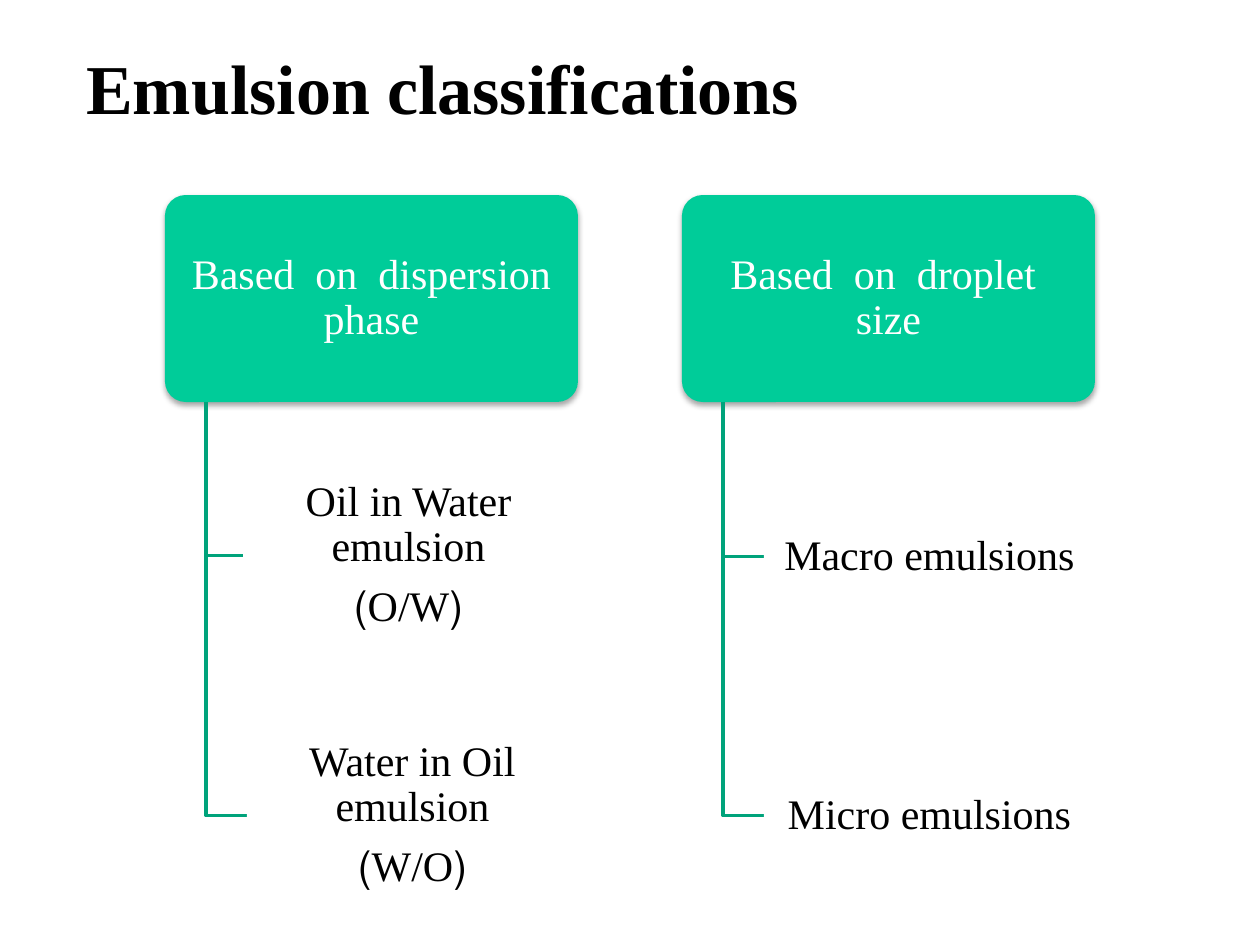
import pptx
import pptx.util
from lxml import etree
from pptx.dml.color import RGBColor
from pptx.enum.shapes import MSO_SHAPE
from pptx.enum.text import MSO_ANCHOR, PP_ALIGN
from pptx.oxml.ns import qn

PX = 914400 / 126
FONT = "Times New Roman"
BLACK = RGBColor(0x00, 0x00, 0x00)
WHITE = RGBColor(0xFF, 0xFF, 0xFF)
GREEN = RGBColor(0x00, 0xCC, 0x99)
DARK_GREEN = RGBColor(0x00, 0xA3, 0x7B)

HEADER_W, CARD_W, CARD_H = 413, 331, 207
HEADER_Y = 195
TRUNK_INSET = 41

# Each branch: left, heading, then (left, top, lines) of its cards
BRANCHES = [
    (165, "Based  on  dispersion phase", [
        (243, 452, ["Oil in Water emulsion", "(O/W)"]),
        (247, 712, ["Water in Oil emulsion", "(W/O)"])]),
    (682, "Based  on  droplet  size", [
        (764, 453, ["Macro emulsions"]),
        (764, 712, ["Micro emulsions"])]),
]


def px(n):
    return pptx.util.Emu(round(n * PX))


def style(p, size, color, bold=False):
    p.font.name = FONT
    p.font.size = pptx.util.Pt(size)
    p.font.bold = bold
    p.font.color.rgb = color


def add_title(slide, text):
    sp = slide.shapes.add_textbox(px(74), px(4), px(1071), px(165))
    tf = sp.text_frame
    tf.word_wrap = True
    tf.vertical_anchor = MSO_ANCHOR.MIDDLE
    p = tf.paragraphs[0]
    p.text = text
    p.alignment = PP_ALIGN.JUSTIFY
    style(p, 40, BLACK, bold=True)


def add_card(slide, x, y, w, lines, fill, color):
    sp = slide.shapes.add_shape(MSO_SHAPE.ROUNDED_RECTANGLE,
                                px(x), px(y), px(w), px(CARD_H))
    sp.adjustments[0] = 0.1
    sp.shadow.inherit = False
    sp.fill.solid()
    sp.fill.fore_color.rgb = fill
    sp.line.fill.background()

    tf = sp.text_frame
    tf.word_wrap = True
    tf.vertical_anchor = MSO_ANCHOR.MIDDLE
    tf.margin_left = tf.margin_right = px(6)
    tf.margin_top = tf.margin_bottom = px(4)
    for i, line in enumerate(lines):
        p = tf.paragraphs[0] if i == 0 else tf.add_paragraph()
        p.text = line
        p.alignment = PP_ALIGN.CENTER
        p.line_spacing = 0.9
        p.space_after = pptx.util.Pt(8.4)
        p._p.get_or_add_pPr().set("rtl", "1")
        style(p, 24, color)
    return sp


def add_alpha(color_el, percent):
    etree.SubElement(color_el, qn("a:alpha")).set("val", str(percent * 1000))


def add_drop_shadow(sp):
    effects = sp._element.spPr.find(qn("a:effectLst"))
    shadow = etree.SubElement(effects, qn("a:outerShdw"), blurRad="40000",
                              dist="23000", dir="5400000", rotWithShape="0")
    color = etree.SubElement(shadow, qn("a:srgbClr"), val=str(BLACK))
    add_alpha(color, 35)


def add_elbow(slide, x, y, end_x, end_y):
    fb = slide.shapes.build_freeform(px(x), px(y))
    fb.add_line_segments([(px(x), px(end_y)), (px(end_x), px(end_y))],
                         close=False)
    sp = fb.convert_to_shape()
    sp.shadow.inherit = False
    sp.fill.background()
    sp.line.color.rgb = DARK_GREEN
    sp.line.width = pptx.util.Pt(2)


def add_branch(slide, x, heading, cards):
    header = add_card(slide, x, HEADER_Y, HEADER_W, [heading], GREEN, WHITE)
    add_drop_shadow(header)
    for card_x, card_y, lines in cards:
        add_elbow(slide, x + TRUNK_INSET, HEADER_Y + CARD_H,
                  card_x, card_y + CARD_H / 2)
        sp = add_card(slide, card_x, card_y, CARD_W, lines, WHITE, BLACK)
        add_alpha(sp._element.spPr.find(qn("a:solidFill"))[0], 90)


def main():
    prs = pptx.Presentation()
    prs.slide_width, prs.slide_height = px(1260), px(945)
    slide = prs.slides.add_slide(prs.slide_layouts[6])

    add_title(slide, "Emulsion classifications")
    for branch in BRANCHES:
        add_branch(slide, *branch)

    prs.save("out.pptx")


if __name__ == "__main__":
    main()
